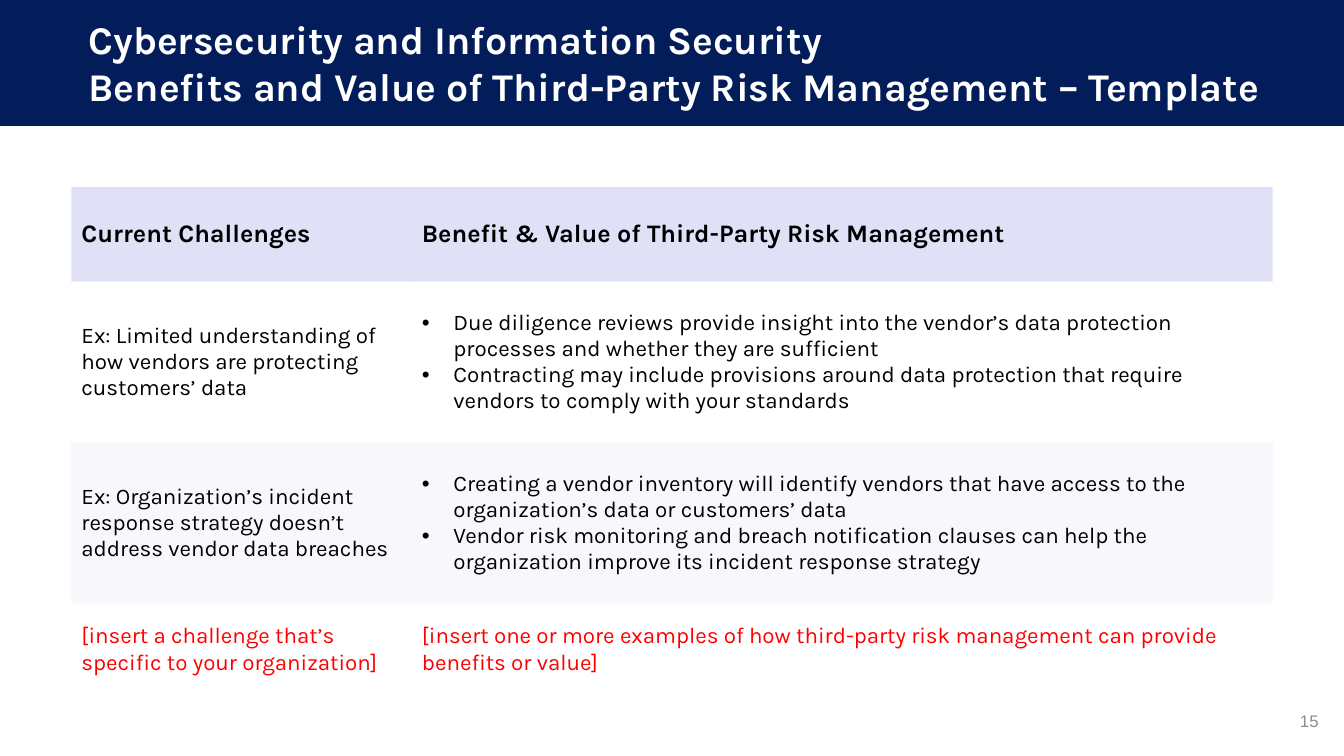
from dataclasses import dataclass

from lxml.etree import SubElement
from pptx import Presentation
from pptx.dml.color import RGBColor
from pptx.enum.shapes import MSO_SHAPE as Shape
from pptx.enum.text import MSO_ANCHOR as Anchor, PP_ALIGN as Align
from pptx.oxml.ns import qn
from pptx.util import Pt


@dataclass(frozen=True)
class Theme:
    font: str = "Karla"
    number_font: str = "Arial"
    navy: str = "031C5A"
    violet: str = "6666D2"
    white: str = "FFFFFF"
    black: str = "000000"
    red: str = "FF0000"
    gray: str = "8C8C8C"
    title_size: int = 28
    header_size: int = 18
    body_size: int = 16
    number_size: int = 12
    header_opacity: int = 20
    band_opacity: int = 5


THEME = Theme()
NO_GRID_STYLE = "{2D5ABB26-0587-4C30-8999-92F81FD0307C}"
BULLET_INDENT = Pt(22.5)
COLUMN_WIDTHS = (243.2, 614.8)
ROW_HEIGHTS = (67.5, 115, 115, 66)

TITLE = [
    "Cybersecurity and Information Security",
    "Benefits and Value of Third-Party Risk Management – Template",
]
HEADERS = ["Current Challenges", "Benefit & Value of Third-Party Risk Management"]
EXAMPLES = [
    ("Ex: Limited understanding of how vendors are protecting customers’ data",
     ["Due diligence reviews provide insight into the vendor’s data protection "
      "processes and whether they are sufficient",
      "Contracting may include provisions around data protection that require "
      "vendors to comply with your standards"]),
    ("Ex: Organization’s incident response strategy doesn’t address vendor data breaches",
     ["Creating a vendor inventory will identify vendors that have access to the "
      "organization’s data or customers’ data",
      "Vendor risk monitoring and breach notification clauses can help the "
      "organization improve its incident response strategy"]),
]
PROMPTS = [
    "[insert a challenge that’s specific to your organization]",
    "[insert one or more examples of how third-party risk management can provide "
    "benefits or value]",
]


def add_bullet(paragraph):
    properties = paragraph._p.get_or_add_pPr()
    properties.set("marL", str(BULLET_INDENT))
    properties.set("indent", str(-BULLET_INDENT))
    SubElement(properties, qn("a:buFont"), typeface="Arial")
    SubElement(properties, qn("a:buChar"), char="•")


def write(text_frame, lines, size, color, bold=False, font=THEME.font,
          align=Align.LEFT, bullets=False):
    for index, line in enumerate(lines):
        paragraph = text_frame.paragraphs[0] if index == 0 else text_frame.add_paragraph()
        paragraph.alignment = align
        if bullets:
            add_bullet(paragraph)
        run = paragraph.add_run()
        run.text = line
        run.font.name = font
        run.font.size = Pt(size)
        run.font.bold = bold
        run.font.color.rgb = RGBColor.from_string(color)


def add_text(slide, left, top, width, height, lines, size, color,
             anchor=Anchor.TOP, **style):
    box = slide.shapes.add_textbox(Pt(left), Pt(top), Pt(width), Pt(height))
    box.text_frame.word_wrap = True
    box.text_frame.vertical_anchor = anchor
    write(box.text_frame, lines, size, color, **style)


def add_banner(slide, width, height):
    banner = slide.shapes.add_shape(Shape.RECTANGLE, 0, 0, width, Pt(height))
    banner.shadow.inherit = False
    banner.fill.solid()
    banner.fill.fore_color.rgb = RGBColor.from_string(THEME.navy)
    banner.line.fill.background()


def fill_cell(cell, opacity):
    """Tint the cell violet at the given opacity in percent; 0 leaves it clear."""
    if not opacity:
        cell.fill.background()
        return
    cell.fill.solid()
    cell.fill.fore_color.rgb = RGBColor.from_string(THEME.violet)
    color = cell._tc.tcPr.find(".//" + qn("a:srgbClr"))
    SubElement(color, qn("a:alpha"), val=str(opacity * 1000))


def set_cell(cell, lines, size, color, opacity=0, padding=7.2, **style):
    cell.vertical_anchor = Anchor.MIDDLE
    cell.margin_left = cell.margin_right = Pt(7.2)
    cell.margin_top = cell.margin_bottom = Pt(padding)
    fill_cell(cell, opacity)
    write(cell.text_frame, lines, size, color, **style)


def add_plain_table(slide, left, top):
    frame = slide.shapes.add_table(
        len(ROW_HEIGHTS), len(COLUMN_WIDTHS), Pt(left), Pt(top),
        Pt(sum(COLUMN_WIDTHS)), Pt(sum(ROW_HEIGHTS)))
    table = frame.table
    table.first_row = table.horz_banding = False
    table._tbl.tblPr.find(qn("a:tableStyleId")).text = NO_GRID_STYLE
    for column, width in zip(table.columns, COLUMN_WIDTHS):
        column.width = Pt(width)
    for row, height in zip(table.rows, ROW_HEIGHTS):
        row.height = Pt(height)
    return table


def add_benefits_table(slide):
    table = add_plain_table(slide, 51, 133.6)
    # Header and closing prompts
    last_row = len(ROW_HEIGHTS) - 1
    for column, (header, prompt) in enumerate(zip(HEADERS, PROMPTS)):
        set_cell(table.cell(0, column), [header], THEME.header_size, THEME.black,
                 THEME.header_opacity, padding=3.6, bold=True)
        set_cell(table.cell(last_row, column), [prompt], THEME.body_size, THEME.red)
    # Examples, every second row tinted
    for row, (challenge, benefits) in enumerate(EXAMPLES, start=1):
        opacity = THEME.band_opacity if row % 2 == 0 else 0
        set_cell(table.cell(row, 0), [challenge], THEME.body_size, THEME.black, opacity)
        set_cell(table.cell(row, 1), benefits, THEME.body_size, THEME.black, opacity,
                 bullets=True)


def main():
    presentation = Presentation()
    presentation.slide_width, presentation.slide_height = Pt(960), Pt(540)
    slide = presentation.slides.add_slide(presentation.slide_layouts[6])

    add_benefits_table(slide)

    # Title banner
    add_banner(slide, presentation.slide_width, 90)
    add_text(slide, 56.2, 7.2, 853.2, 75, TITLE, THEME.title_size, THEME.white, bold=True)

    # Slide number
    add_text(slide, 733, 500.5, 216, 28.8, ["15"], THEME.number_size, THEME.gray,
             anchor=Anchor.MIDDLE, font=THEME.number_font, align=Align.RIGHT)

    presentation.save("out.pptx")


if __name__ == "__main__":
    main()
